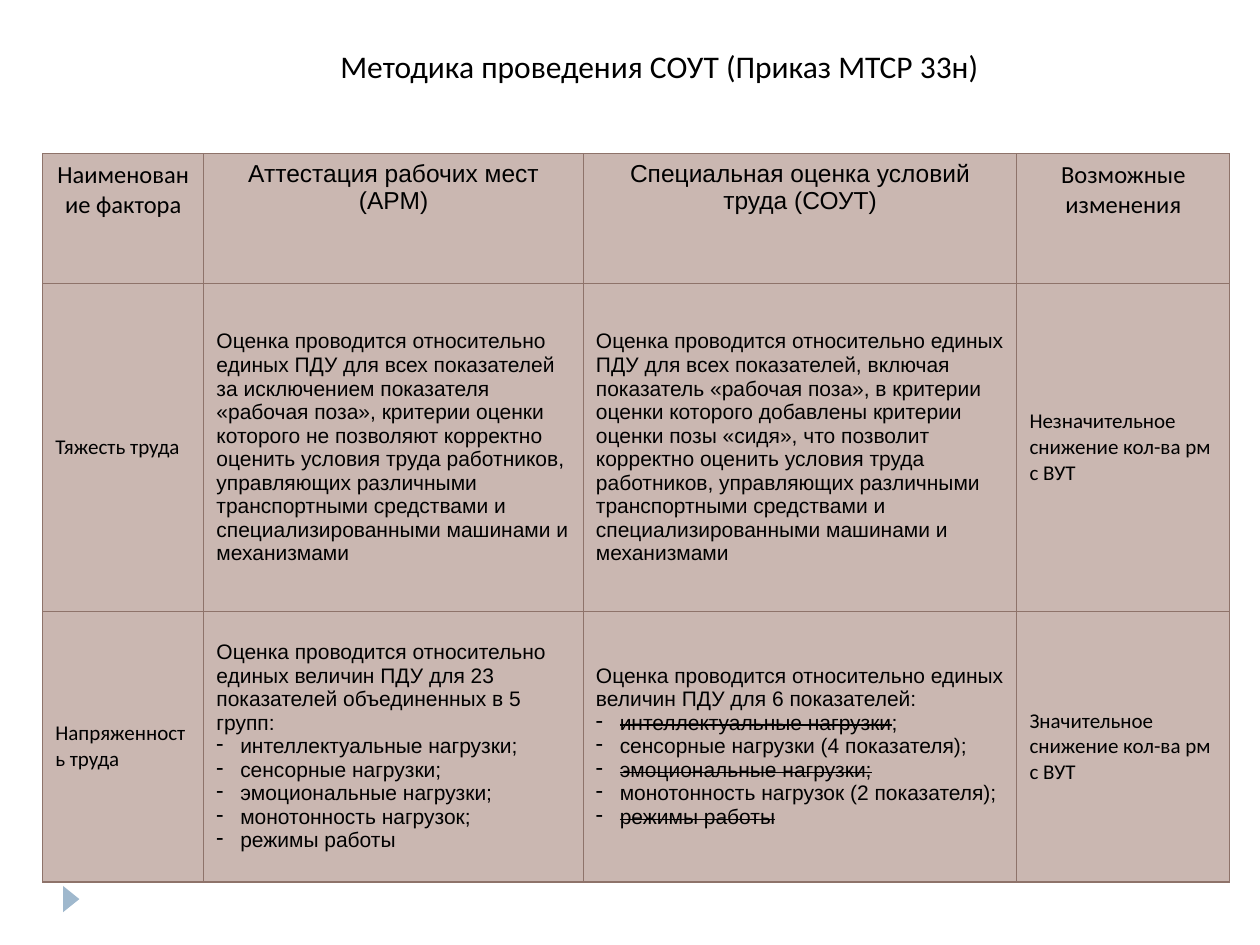
from dataclasses import dataclass

from lxml import etree
from pptx import Presentation
from pptx.dml.color import RGBColor
from pptx.enum.shapes import MSO_SHAPE
from pptx.enum.text import MSO_ANCHOR, PP_ALIGN
from pptx.oxml.ns import qn
from pptx.util import Cm, Pt

CENTER, LEFT = PP_ALIGN.CENTER, PP_ALIGN.LEFT
TOP, MIDDLE = MSO_ANCHOR.TOP, MSO_ANCHOR.MIDDLE
TRIANGLE = MSO_SHAPE.ISOSCELES_TRIANGLE

BLACK = RGBColor(0x00, 0x00, 0x00)
CELL_FILL = RGBColor(0xCA, 0xB7, 0xB1)
BORDER = RGBColor(0x8E, 0x73, 0x6A)
MARKER = RGBColor(0x9F, 0xB8, 0xCD)

COLUMN_WIDTHS = (3.25, 7.65, 8.74, 4.29)
ROW_HEIGHTS = (2.62, 6.6, 5.46)
COLUMN_FONTS = ("Calibri", "Arial", "Arial", "Calibri")


@dataclass(frozen=True)
class Line:
    """One paragraph of a cell: a struck-out beginning, then plain text."""
    text: str = ""
    struck: str = ""
    bullet: bool = False


ROWS: list[list[list[Line]]] = [
    [
        [Line("Наименование фактора")],
        [Line("Аттестация рабочих мест (АРМ)")],
        [Line("Специальная оценка условий труда (СОУТ)")],
        [Line("Возможные изменения")],
    ],
    [
        [Line("Тяжесть труда")],
        [Line("Оценка проводится относительно единых ПДУ для всех показателей "
              "за исключением показателя «рабочая поза», критерии оценки которого "
              "не позволяют корректно оценить условия труда работников, "
              "управляющих различными транспортными средствами и "
              "специализированными машинами и механизмами")],
        [Line("Оценка проводится относительно единых ПДУ для всех показателей, "
              "включая показатель «рабочая поза», в критерии оценки которого "
              "добавлены критерии оценки позы «сидя», что позволит корректно "
              "оценить условия труда работников, управляющих различными "
              "транспортными средствами и специализированными машинами и "
              "механизмами")],
        [Line("Незначительное снижение кол-ва рм с ВУТ")],
    ],
    [
        [Line("Напряженность труда")],
        [
            Line("Оценка проводится относительно единых величин ПДУ для 23 "
                 "показателей объединенных в 5 групп:"),
            Line("интеллектуальные нагрузки;", bullet=True),
            Line("сенсорные нагрузки;", bullet=True),
            Line("эмоциональные нагрузки;", bullet=True),
            Line("монотонность нагрузок;", bullet=True),
            Line("режимы работы", bullet=True),
        ],
        [
            Line("Оценка проводится относительно единых величин ПДУ для 6 "
                 "показателей:"),
            Line(";", struck="интеллектуальные нагрузки", bullet=True),
            Line("сенсорные нагрузки (4 показателя);", bullet=True),
            Line(struck="эмоциональные нагрузки;", bullet=True),
            Line("монотонность нагрузок (2 показателя);", bullet=True),
            Line(struck="режимы работы", bullet=True),
        ],
        [Line("Значительное снижение кол-ва рм с ВУТ")],
    ],
]


def format_run(run, font_name: str, size: int) -> None:
    run.font.name = font_name
    run.font.size = Pt(size)
    run.font.bold = False
    run.font.color.rgb = BLACK


def add_dash_bullet(paragraph) -> None:
    properties = paragraph._p.get_or_add_pPr()
    properties.set("marL", str(Cm(0.48)))
    properties.set("indent", str(-Cm(0.48)))
    etree.SubElement(properties, qn("a:buChar")).set("char", "-")


def add_borders(cell) -> None:
    properties = cell._tc.get_or_add_tcPr()
    for side in ("lnL", "lnR", "lnT", "lnB"):
        border = etree.SubElement(properties, qn(f"a:{side}"))
        border.set("w", str(Pt(0.75)))
        fill = etree.SubElement(border, qn("a:solidFill"))
        etree.SubElement(fill, qn("a:srgbClr")).set("val", str(BORDER))


def fill_cell(cell, lines: list[Line], font_name: str, is_header: bool) -> None:
    add_borders(cell)
    cell.fill.solid()
    cell.fill.fore_color.rgb = CELL_FILL
    cell.vertical_anchor = TOP if is_header else MIDDLE
    text_frame = cell.text_frame
    for index, line in enumerate(lines):
        paragraph = text_frame.add_paragraph() if index else text_frame.paragraphs[0]
        paragraph.alignment = CENTER if is_header else LEFT
        if line.bullet:
            add_dash_bullet(paragraph)
        for text, is_struck in ((line.struck, True), (line.text, False)):
            if text:
                run = paragraph.add_run()
                run.text = text
                format_run(run, font_name, 14 if is_header else 12)
                if is_struck:
                    run.font._element.set("strike", "sngStrike")


def add_title(slide) -> None:
    title = slide.shapes.title
    title.left, title.top, title.width, title.height = (
        Cm(3.4), Cm(0.53), Cm(19.79), Cm(1.6))
    text_frame = title.text_frame
    text_frame.text = "Методика проведения СОУТ (Приказ МТСР 33н)"
    text_frame.vertical_anchor = MIDDLE
    paragraph = text_frame.paragraphs[0]
    paragraph.alignment = CENTER
    format_run(paragraph.runs[0], "Calibri", 18)


def add_comparison_table(slide) -> None:
    table = slide.shapes.add_table(
        len(ROW_HEIGHTS), len(COLUMN_WIDTHS), Cm(0.86), Cm(3.1),
        Cm(sum(COLUMN_WIDTHS)), Cm(sum(ROW_HEIGHTS))).table
    for column, width in zip(table.columns, COLUMN_WIDTHS):
        column.width = Cm(width)
    for row_index, (row, height) in enumerate(zip(table.rows, ROW_HEIGHTS)):
        row.height = Cm(height)
        for cell, lines, font_name in zip(row.cells, ROWS[row_index], COLUMN_FONTS):
            fill_cell(cell, lines, font_name, is_header=row_index == 0)


def add_footer_marker(slide) -> None:
    marker = slide.shapes.add_shape(
        TRIANGLE, Cm(1.17), Cm(17.96), Cm(0.53), Cm(0.33))
    marker.rotation = 90
    marker.shadow.inherit = False
    marker.fill.solid()
    marker.fill.fore_color.rgb = MARKER
    marker.line.fill.background()


def main() -> None:
    presentation = Presentation()
    presentation.slide_width, presentation.slide_height = Cm(25.4), Cm(19.05)
    title_only = presentation.slide_layouts[5]
    slide = presentation.slides.add_slide(title_only)
    add_footer_marker(slide)
    add_title(slide)
    add_comparison_table(slide)
    presentation.save("out.pptx")


if __name__ == "__main__":
    main()
